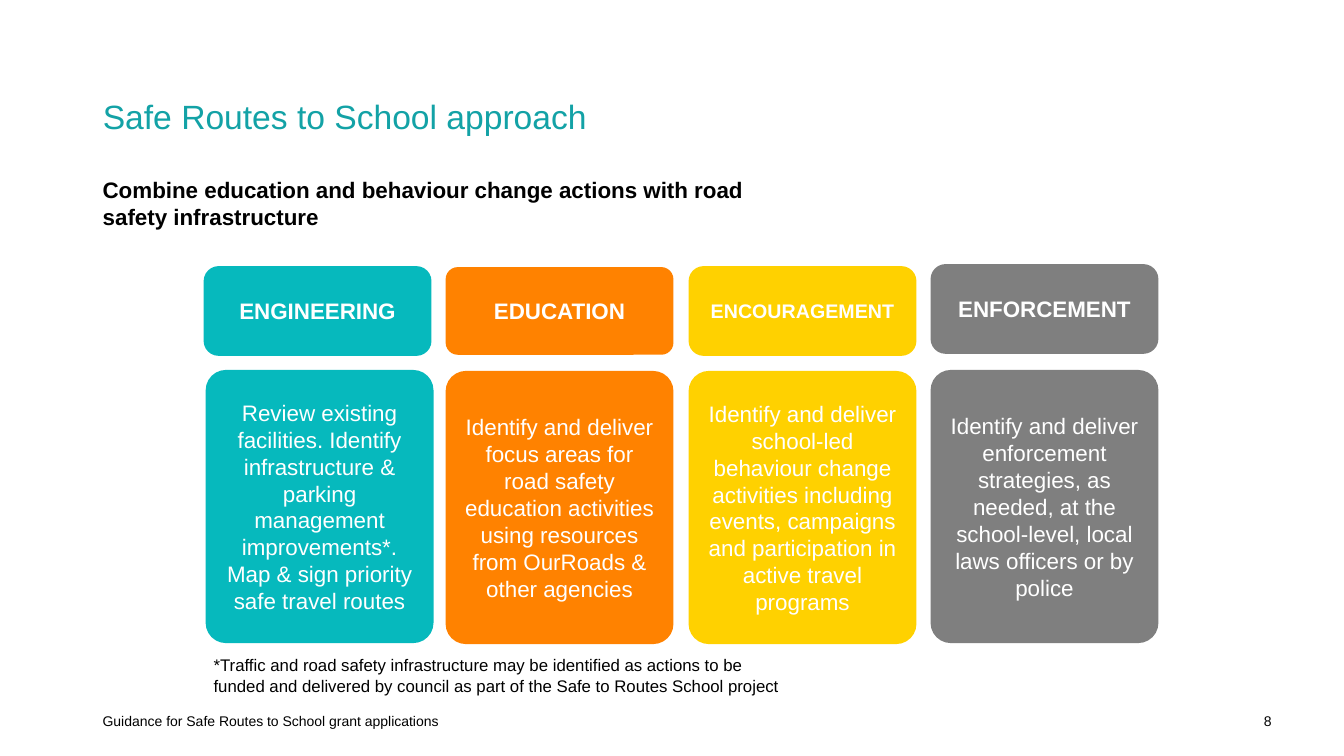
from pptx import Presentation
from pptx.dml.color import RGBColor
from pptx.enum.shapes import MSO_SHAPE as Shape
from pptx.enum.text import MSO_ANCHOR as Anchor, MSO_AUTO_SIZE as AutoSize, PP_ALIGN as Align
from pptx.util import Pt

PX = 9144
FONT = "Arial"
COLOURS = {
    "title": "13A2A6", "text": "000000", "label": "FFFFFF", "teal": "06B9BD",
    "orange": "FF8200", "yellow": "FFD100", "grey": "7F7F7F",
}
TITLE = "Safe Routes to School approach"
NOTES = [
    (["Combine education and behaviour change actions with road safety infrastructure"],
     (92, 170, 667, 64), 16, True, Align.LEFT, Anchor.TOP),
    (["*Traffic and road safety infrastructure may be identified as actions to be funded "
      "and delivered by council as part of the Safe to Routes School project"],
     (202, 645, 594, 50), 12, False, Align.LEFT, Anchor.TOP),
    (["Guidance for Safe Routes to School grant applications"],
     (92, 695, 800, 40), 10, False, Align.LEFT, Anchor.MIDDLE),
    (["8"], (971, 695, 300, 40), 10, False, Align.RIGHT, Anchor.MIDDLE),
]
PILLARS = [
    ("teal", "ENGINEERING", 16, (202, 264, 89, 0.167), (204, 367),
     ["Review existing facilities. Identify infrastructure & parking management improvements*.",
      "Map & sign priority safe travel routes"]),
    ("orange", "EDUCATION", 16, (442, 265, 87, 0.139), (442, 368),
     ["Identify and deliver focus areas for road safety education activities using "
      "resources from OurRoads & other agencies"]),
    ("yellow", "ENCOURAGEMENT", 14, (683, 264, 89, 0.167), (683, 368),
     ["Identify and deliver school-led behaviour change activities including events, "
      "campaigns and participation in active travel programs"]),
    ("grey", "ENFORCEMENT", 16, (923, 262, 89, 0.167), (923, 367),
     ["Identify and deliver enforcement strategies, as needed, at the school-level, "
      "local laws officers or by police"]),
]
CARD_WIDTH, CARD_HEIGHT, CARD_ROUNDING = 226, 271, 0.089


def rgb(name):
    return RGBColor.from_string(COLOURS[name])


def scaled(area):
    return [length * PX for length in area]


def write(shape, lines, size, colour, bold=False, align=Align.LEFT, anchor=Anchor.MIDDLE):
    frame = shape.text_frame
    frame.word_wrap = True
    frame.auto_size = AutoSize.NONE
    frame.vertical_anchor = anchor
    for index, line in enumerate(lines):
        para = frame.add_paragraph() if index else frame.paragraphs[0]
        para.alignment = align
        span = para.add_run()
        span.text = line
        span.font.name = FONT
        span.font.size = Pt(size)
        span.font.bold = bold
        span.font.color.rgb = rgb(colour)


def add_card(page, area, rounding, fill, lines, size, bold):
    card = page.shapes.add_shape(Shape.ROUNDED_RECTANGLE, *scaled(area))
    card.adjustments[0] = rounding
    card.shadow.inherit = False
    card.fill.solid()
    card.fill.fore_color.rgb = rgb(fill)
    card.line.fill.background()
    write(card, lines, size, "label", bold, Align.CENTER)


def main():
    deck = Presentation()
    deck.slide_width, deck.slide_height = scaled((1333, 750))
    page = deck.slides.add_slide(deck.slide_layouts[5])

    title = page.shapes.title
    title.left, title.top, title.width, title.height = scaled((92, 40, 1150, 101))
    write(title, [TITLE], 24, "title", anchor=Anchor.BOTTOM)
    title.text_frame.paragraphs[0].line_spacing = 0.9

    for lines, area, size, bold, align, anchor in NOTES:
        box = page.shapes.add_textbox(*scaled(area))
        write(box, lines, size, "text", bold, align, anchor)

    for fill, heading, size, head, (left, top), lines in PILLARS:
        head_left, head_top, head_height, rounding = head
        add_card(page, (head_left, head_top, CARD_WIDTH, head_height), rounding,
                 fill, [heading], size, True)
        add_card(page, (left, top, CARD_WIDTH, CARD_HEIGHT), CARD_ROUNDING,
                 fill, lines, 16, False)

    deck.save("out.pptx")


if __name__ == "__main__":
    main()
